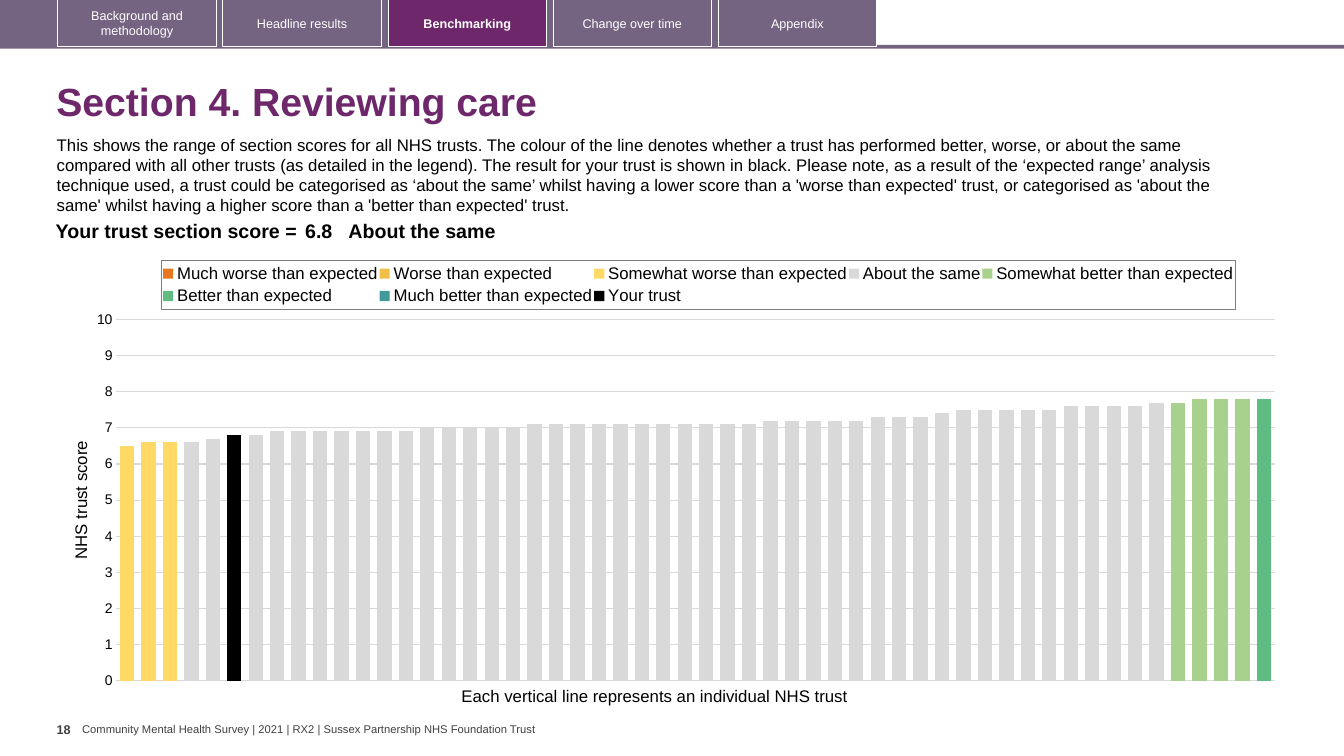
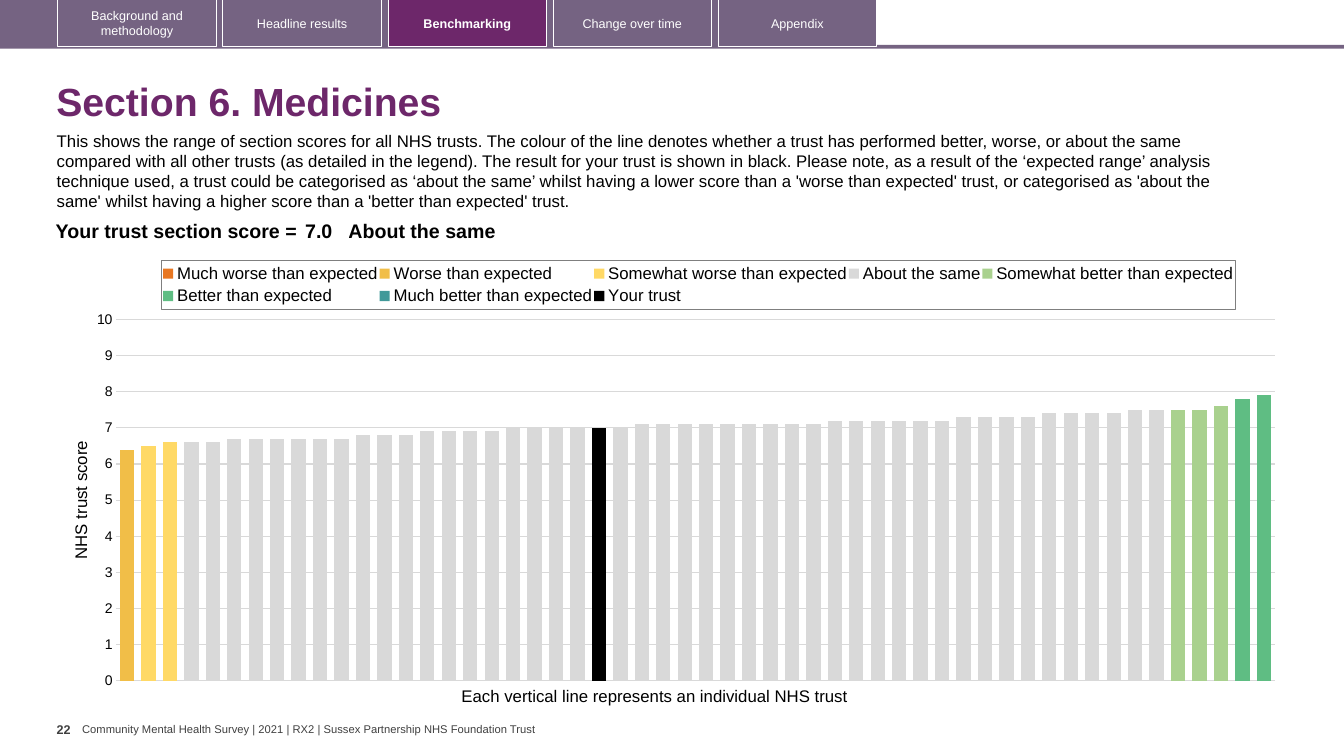
from copy import deepcopy
from itertools import accumulate

from pptx import Presentation
from pptx import util as u
from pptx.chart import data as cd
from pptx.dml import color as dc
from pptx.enum import chart as ce, shapes, text
from pptx.oxml import parse_xml
from pptx.oxml import ns

FONT = "Arial"
BLACK, WHITE, GREY, GRID = "000000", "FFFFFF", "404040", "D9D9D9"
PLUM, MAUVE = "6D276A", "756382"
TABS = ["Background and methodology", "Headline results", "Benchmarking",
        "Change over time", "Appendix"]
ACTIVE_TAB = "Benchmarking"
BANDS = {
    "Much worse than expected": "E87722",
    "Worse than expected": "F1BE48",
    "Somewhat worse than expected": "FFD966",
    "About the same": "D9D9D9",
    "Somewhat better than expected": "A9D18E",
    "Better than expected": "5FBD83",
    "Much better than expected": "419999",
}
FOOTER = ("Community Mental Health Survey | 2021 | RX2 | "
          "Sussex Partnership NHS Foundation Trust")
INTRO = (
    "This shows the range of section scores for all NHS trusts. The colour of the line "
    "denotes whether a trust has performed better, worse, or about the same compared with "
    "all other trusts (as detailed in the legend). The result for your trust is shown in "
    "black. Please note, as a result of the ‘expected range’ analysis technique used, a "
    "trust could be categorised as ‘about the same’ whilst having a lower score than a "
    "'worse than expected' trust, or categorised as 'about the same' whilst having a higher "
    "score than a 'better than expected' trust.")
SECTIONS = [
    {"title": "Section 4. Reviewing care", "page": 18, "intro_top": 3.26, "trust": 5,
     "band_sizes": [0, 0, 3, 46, 4, 1, 0],
     "score_counts": {6.5: 1, 6.6: 3, 6.7: 1, 6.8: 2, 6.9: 7, 7: 5, 7.1: 11, 7.2: 5,
                      7.3: 3, 7.4: 1, 7.5: 5, 7.6: 4, 7.7: 2, 7.8: 4}},
    {"title": "Section 6. Medicines", "page": 22, "intro_top": 3.16, "trust": 22,
     "band_sizes": [0, 1, 2, 46, 3, 2, 0],
     "score_counts": {6.4: 1, 6.5: 1, 6.6: 3, 6.7: 6, 6.8: 3, 6.9: 4, 7: 6, 7.1: 9,
                      7.2: 6, 7.3: 4, 7.4: 4, 7.5: 4, 7.6: 1, 7.8: 1, 7.9: 1}},
]


def rgb(value):
    return dc.RGBColor.from_string(value)


def cm(*values):
    return [u.Cm(v) for v in values]


def set_font(font, size, color=BLACK, bold=False):
    font.name, font.size, font.bold = FONT, u.Pt(size), bold
    font.color.rgb = rgb(color)


def write(tf, content, size=12, color=BLACK, bold=False, align=None, spacing=None):
    p = tf.paragraphs[0]
    p.alignment, p.line_spacing = align, spacing
    r = p.add_run()
    r.text = content
    set_font(r.font, size, color, bold)


def add_text(s, box, content, inset=(0.25, 0.13), wrap=True,
             anchor=text.MSO_ANCHOR.TOP, **fmt):
    tf = s.shapes.add_textbox(*cm(*box)).text_frame
    tf.word_wrap, tf.vertical_anchor = wrap, anchor
    tf.margin_left = tf.margin_right = u.Cm(inset[0])
    tf.margin_top = tf.margin_bottom = u.Cm(inset[1])
    write(tf, content, **fmt)


def add_rect(s, box, fill=None, line=None):
    sp = s.shapes.add_shape(shapes.MSO_SHAPE.RECTANGLE, *cm(*box))
    sp.shadow.inherit = False
    if fill:
        sp.fill.solid()
        sp.fill.fore_color.rgb = rgb(fill)
    else:
        sp.fill.background()
    if line:
        sp.line.color.rgb = rgb(line)
        sp.line.width = u.Pt(0.75)
    else:
        sp.line.fill.background()
    return sp


def add_navigation(s, box):
    x, y, w, h = box
    tab_w, step, first = 3.99, 4.16, 1.46
    add_rect(s, (x, y + h - 0.1, w, 0.1), MAUVE)
    add_rect(s, (x, y, first + step * (len(TABS) - 1) + tab_w, h - 0.04), MAUVE)
    for i, name in enumerate(TABS):
        active = name == ACTIVE_TAB
        sp = add_rect(s, (x + first + i * step, y - 0.02, tab_w, h - 0.03),
                      PLUM if active else None, WHITE)
        sp.text_frame.word_wrap = True
        sp.text_frame.vertical_anchor = text.MSO_ANCHOR.MIDDLE
        write(sp.text_frame, name, size=9, color=WHITE, bold=active,
              align=text.PP_ALIGN.CENTER)


def add_footer(s, box, page):
    x, y, w, h = box
    add_text(s, (x, y, 0.64, h), str(page), inset=(0, 0.13), wrap=False,
             size=9, color=GREY, bold=True)
    add_text(s, (x + 0.64, y + 0.16, w - 0.64, 0.33), FOOTER, inset=(0, 0), wrap=False,
             anchor=text.MSO_ANCHOR.MIDDLE, size=8, color=GREY)


def add_score(s, box, score):
    x, y, w, h = box
    label_w, score_w = 6.68, 1.19
    table = s.shapes.add_table(1, 3, *cm(x, y, w, h)).table
    table.first_row = table.horz_banding = False
    columns = [("Your trust section score =", label_w, 0.1, text.PP_ALIGN.RIGHT),
               (f"{score:.1f}", score_w, 0.1, None),
               ("About the same", w - label_w - score_w, 0, None)]
    for i, (content, width, side, align) in enumerate(columns):
        table.columns[i].width = u.Cm(width)
        cell = table.cell(0, i)
        cell.fill.background()
        cell.margin_left = cell.margin_right = u.Cm(side)
        cell.margin_top = cell.margin_bottom = u.Cm(0.1)
        write(cell.text_frame, content, size=14, bold=True, align=align)


def place(element, index, frame, inner=False, **lengths):
    for old in element.xpath("./c:layout"):
        element.remove(old)
    target = '<c:layoutTarget val="inner"/>' if inner else ""
    modes = "".join(f'<c:{k}Mode val="edge"/>' for k in "xy")
    sizes = "".join(f'<c:{k} val="{v / frame[k in "yh"]:.4f}"/>'
                    for k, v in lengths.items())
    element.insert(index, parse_xml(
        f'<c:layout {ns.nsdecls("c")}><c:manualLayout>{target}{modes}{sizes}'
        '</c:manualLayout></c:layout>'))


def chart_data(scores, band_sizes, trust):
    data = cd.CategoryChartData(number_format="0.0")
    data.categories = [str(i + 1) for i in range(len(scores))]
    for name, size, end in zip(BANDS, band_sizes, accumulate(band_sizes)):
        data.add_series(name, [v if end - size <= i < end else None
                               for i, v in enumerate(scores)])
    data.add_series("Your trust", [v if i == trust else None
                                   for i, v in enumerate(scores)])
    return data


def move_last_series_to_right_axis(chart):
    bars, = chart.element.xpath(".//c:barChart")
    axes = chart.element.xpath(".//c:catAx | .//c:valAx")
    right_bars, right_axes = deepcopy(bars), [deepcopy(a) for a in axes]
    bars.remove(bars.xpath("./c:ser")[-1])
    for ser in right_bars.xpath("./c:ser")[:-1]:
        right_bars.remove(ser)
    bars.addnext(right_bars)
    ids = {a.xpath("./c:axId")[0].get("val"): str(9001 + i) for i, a in enumerate(axes)}
    for part in [right_bars, *right_axes]:
        for ref in part.xpath("./c:axId | ./c:crossAx"):
            ref.set("val", ids[ref.get("val")])
    right_value = right_axes[1]
    for extra in right_value.xpath("./c:majorGridlines | ./c:title"):
        right_value.remove(extra)
    for tag, val in (("axPos", "r"), ("majorTickMark", "out"),
                     ("tickLblPos", "none"), ("crosses", "max")):
        right_value.xpath(f"./c:{tag}")[0].set("val", val)
    for axis in right_axes:
        axes[-1].addnext(axis)


def add_benchmark(s, box, data):
    x, y, w, h = box
    chart = s.shapes.add_chart(ce.XL_CHART_TYPE.COLUMN_CLUSTERED, *cm(*box), data).chart
    chart.has_title = False
    set_font(chart.font, 10)

    plot = chart.plots[0]
    plot.gap_width, plot.overlap, plot.vary_by_categories = 50, 100, False
    for series, color in zip(plot.series, [*BANDS.values(), BLACK]):
        series.format.fill.solid()
        series.format.fill.fore_color.rgb = rgb(color)
        series.invert_if_negative = False

    chart.category_axis.visible = False
    axis = chart.value_axis
    axis.minimum_scale, axis.maximum_scale, axis.major_unit = 0, 10, 1
    axis.major_tick_mark = ce.XL_TICK_MARK.NONE
    axis.tick_labels.number_format = "0"
    axis.tick_labels.number_format_is_linked = False
    set_font(axis.tick_labels.font, 10)
    axis.format.line.fill.background()
    axis.major_gridlines.format.line.color.rgb = rgb(GRID)
    axis.major_gridlines.format.line.width = u.Pt(0.75)
    write(axis.axis_title.text_frame, "NHS trust score")

    chart.has_legend = True
    chart.legend.position = ce.XL_LEGEND_POSITION.TOP
    chart.legend.include_in_layout = False
    set_font(chart.legend.font, 12)

    legend, = chart.element.xpath(".//c:legend")
    legend.xpath("./c:txPr")[0].addprevious(parse_xml(
        f'<c:spPr {ns.nsdecls("c", "a")}><a:ln w="6350"><a:solidFill>'
        '<a:srgbClr val="7F7F7F"/></a:solidFill></a:ln></c:spPr>'))
    place(legend, 1, (w, h), x=2.37, y=0.29, w=27.06, h=1.24)
    place(chart.element.xpath(".//c:valAx/c:title")[0], 1, (w, h), x=0, y=4.76)
    place(chart.element.xpath(".//c:plotArea")[0], 0, (w, h), inner=True,
          x=1.23, y=1.78, w=29.19, h=9.11)
    move_last_series_to_right_axis(chart)
    add_text(s, (x + 9.68, y + h - 0.4, 10.44, 0.76),
             "Each vertical line represents an individual NHS trust", wrap=False)


def add_section(prs, title, page, intro_top, trust, band_sizes, score_counts):
    s = prs.slides.add_slide(prs.slide_layouts[6])
    scores = [v for v, n in score_counts.items() for _ in range(n)]
    add_navigation(s, (0, 0, 33.87, 1.23))
    add_text(s, (1.17, 1.7, 31.72, 1.83), title, anchor=text.MSO_ANCHOR.MIDDLE,
             size=28, color=PLUM, bold=True, spacing=0.9)
    add_text(s, (1.18, intro_top, 30.81, 2.31), INTRO)
    add_benchmark(s, (1.7, 6.27, 30.86, 11.28), chart_data(scores, band_sizes, trust))
    add_score(s, (0.91, 5.46, 29.69, 0.79), scores[trust])
    add_footer(s, (1.43, 18.05, 12.22, 1.02), page)


def main():
    prs = Presentation()
    prs.slide_width, prs.slide_height = cm(33.87, 19.05)
    for section in SECTIONS:
        add_section(prs, **section)
    prs.save("out.pptx")


if __name__ == "__main__":
    main()
